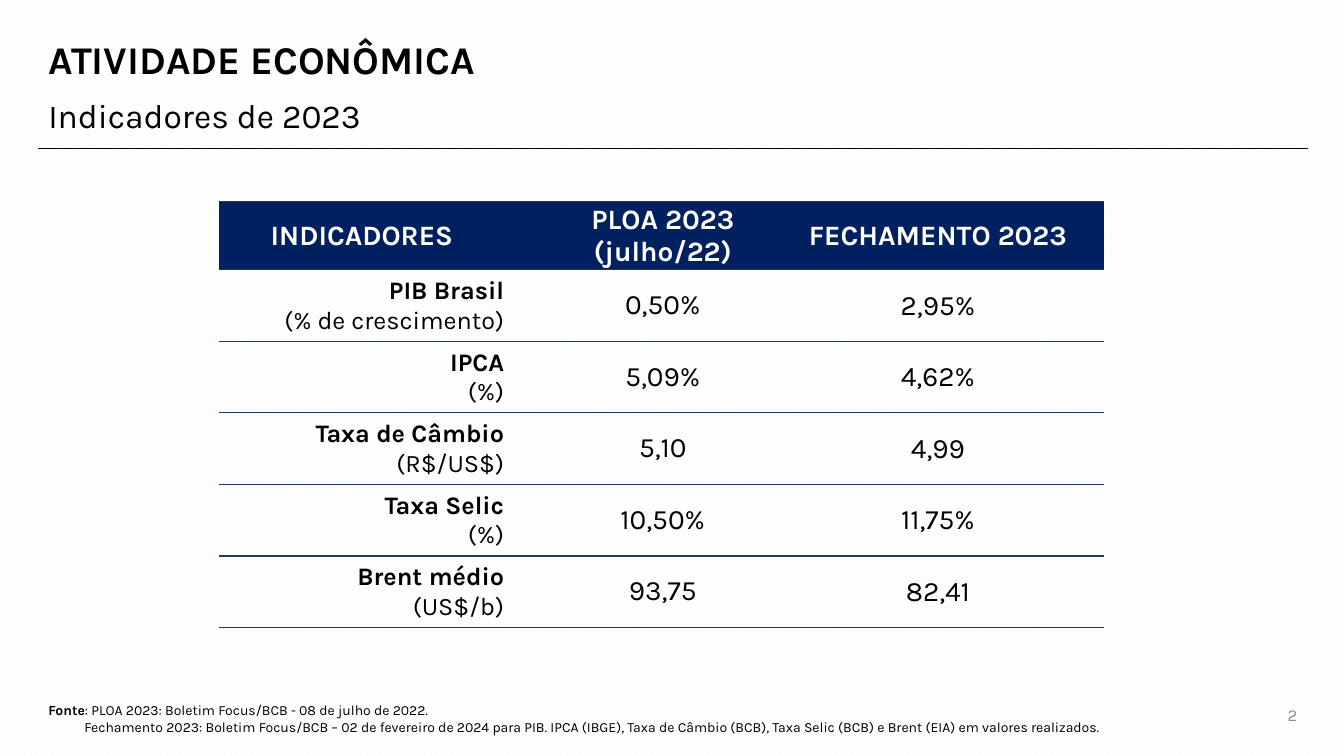
from dataclasses import dataclass
from typing import NamedTuple

from lxml import etree
from pptx import Presentation
from pptx.dml.color import RGBColor
from pptx.enum.dml import MSO_PATTERN
from pptx.enum.shapes import MSO_CONNECTOR
from pptx.enum.text import MSO_ANCHOR, MSO_AUTO_SIZE, PP_ALIGN
from pptx.oxml.ns import qn
from pptx.util import Pt

LEFT, CENTER, RIGHT = PP_ALIGN.LEFT, PP_ALIGN.CENTER, PP_ALIGN.RIGHT
MIDDLE, BOTTOM = MSO_ANCHOR.MIDDLE, MSO_ANCHOR.BOTTOM
NO_FIT = MSO_AUTO_SIZE.NONE
STRAIGHT = MSO_CONNECTOR.STRAIGHT
WIDE_DIAGONAL = MSO_PATTERN.WIDE_DOWNWARD_DIAGONAL
NO_STYLE_NO_GRID = "{2D5ABB26-0587-4C30-8999-92F81FD0307C}"


@dataclass(frozen=True)
class Theme:
    font: str = "Karla"
    ink: str = "000000"
    paper: str = "FFFFFF"
    hatch: str = "F2F2F2"
    navy: str = "002060"
    rule: str = "203864"
    muted: str = "8C8C8C"
    title: int = 28
    subtitle: int = 24
    value: int = 20
    label: int = 18
    number: int = 12
    source: int = 10


class Part(NamedTuple):
    text: str
    bold: bool = False


class Box(NamedTuple):
    left: float
    top: float
    width: float
    height: float


class Indicator(NamedTuple):
    name: str
    unit: str
    forecast: str
    closing: str


THEME = Theme()
COLUMN_WIDTHS = (204.5, 12.2, 190.8, 202.3, 6.5)
LABEL_COL, FORECAST_COL, CLOSING_COL = 0, 2, 3
HEADER_HEIGHT, ROW_HEIGHT = 48, 51.1
TIGHT = (0.72, 0.72, 0.72, 0)
ROOMY = (10.8, 5.76, 10.8, 5.76)
HEADINGS = {
    LABEL_COL: ("INDICADORES",),
    FORECAST_COL: ("PLOA 2023", "(julho/22)"),
    CLOSING_COL: ("FECHAMENTO 2023",),
}
INDICATORS = (
    Indicator("PIB Brasil", "(% de crescimento)", "0,50%", "2,95%"),
    Indicator("IPCA", "(%)", "5,09%", "4,62%"),
    Indicator("Taxa de Câmbio", "(R$/US$)", "5,10", "4,99"),
    Indicator("Taxa Selic", "(%)", "10,50%", "11,75%"),
    Indicator("Brent médio", "(US$/b)", "93,75", "82,41"),
)


def rgb(value: str) -> RGBColor:
    return RGBColor.from_string(value)


def write(frame, lines, *, size, color=THEME.ink, align=LEFT, spacing=None) -> None:
    """Fill a text frame with lines, each a sequence of parts."""
    for index, parts in enumerate(lines):
        paragraph = frame.paragraphs[0] if index == 0 else frame.add_paragraph()
        paragraph.alignment = align
        if spacing:
            paragraph.line_spacing = spacing
        for part in parts:
            run = paragraph.add_run()
            run.text = part.text
            run.font.name = THEME.font
            run.font.size = Pt(size)
            run.font.bold = part.bold
            run.font.color.rgb = rgb(color)


def add_text(slide, box: Box, lines, *, anchor=MIDDLE, **text_format):
    frame = slide.shapes.add_textbox(*map(Pt, box)).text_frame
    frame.word_wrap = True
    frame.vertical_anchor = anchor
    write(frame, lines, **text_format)
    return frame


def write_cell(cell, lines, *, insets=TIGHT, **text_format) -> None:
    cell.vertical_anchor = MIDDLE
    (cell.margin_left, cell.margin_top,
     cell.margin_right, cell.margin_bottom) = map(Pt, insets)
    write(cell.text_frame, lines, **text_format)


def rule_cell(cell) -> None:
    """Draw the thin rule above and below a cell."""
    properties = cell._tc.get_or_add_tcPr()
    for side in ("a:lnT", "a:lnB"):
        line = etree.SubElement(properties, qn(side), w=str(Pt(1)))
        fill = etree.SubElement(line, qn("a:solidFill"))
        etree.SubElement(fill, qn("a:srgbClr"), val=THEME.rule)


def add_heading(slide) -> None:
    title = slide.shapes.title
    title.left, title.top, title.width, title.height = map(
        Pt, Box(27.4, 15.8, 565.2, 56.9))
    title.text_frame.auto_size = NO_FIT
    title.text_frame.vertical_anchor = MIDDLE
    write(title.text_frame, [[Part("ATIVIDADE ECONÔMICA", True)]],
          size=THEME.title, spacing=0.9)
    add_text(slide, Box(27.4, 58.3, 862.6, 42.5), [[Part("Indicadores de 2023")]],
             size=THEME.subtitle, spacing=1.2)
    divider = slide.shapes.add_connector(
        STRAIGHT, Pt(27.4), Pt(105.8), Pt(934.6), Pt(105.8))
    divider.line.color.rgb = rgb(THEME.ink)
    divider.line.width = Pt(0.5)
    etree.SubElement(divider._element.spPr, qn("a:effectLst"))


def add_indicators(slide) -> None:
    box = Box(156.3, 144, sum(COLUMN_WIDTHS),
              HEADER_HEIGHT + ROW_HEIGHT * len(INDICATORS))
    table = slide.shapes.add_table(
        len(INDICATORS) + 1, len(COLUMN_WIDTHS), *map(Pt, box)).table
    table._tbl.tblPr.find(qn("a:tableStyleId")).text = NO_STYLE_NO_GRID
    table.horz_banding = False
    for column, width in zip(table.columns, COLUMN_WIDTHS):
        column.width = Pt(width)
    for index, row in enumerate(table.rows):
        row.height = Pt(ROW_HEIGHT if index else HEADER_HEIGHT)
        for cell in row.cells:
            rule_cell(cell)
            if index:
                cell.fill.background()
            else:
                cell.fill.solid()
                cell.fill.fore_color.rgb = rgb(THEME.navy)

    # Header row
    for column, heading in HEADINGS.items():
        write_cell(table.cell(0, column), [[Part(text, True)] for text in heading],
                   size=THEME.value, color=THEME.paper, align=CENTER)

    # Indicator rows
    for index, item in enumerate(INDICATORS, start=1):
        write_cell(table.cell(index, LABEL_COL),
                   [[Part(item.name, True)], [Part(item.unit)]],
                   size=THEME.label, align=RIGHT)
        write_cell(table.cell(index, FORECAST_COL), [[Part(item.forecast)]],
                   insets=ROOMY, size=THEME.value, align=CENTER)
        write_cell(table.cell(index, CLOSING_COL), [[Part(item.closing)]],
                   size=THEME.value, align=CENTER)


def add_footer(slide) -> None:
    source = add_text(slide, Box(27.4, 496.8, 775.4, 32.2), [
        [Part("Fonte", True),
         Part(": PLOA 2023: Boletim Focus/BCB - 08 de julho de 2022.")],
        [Part("Fechamento 2023: Boletim Focus/BCB – 02 de fevereiro de 2024 para PIB. "
              "IPCA (IBGE), Taxa de Câmbio (BCB), Taxa Selic (BCB) e Brent (EIA) "
              "em valores realizados.")],
    ], anchor=BOTTOM, size=THEME.source)
    source.paragraphs[1]._p.get_or_add_pPr().set("marL", str(Pt(25.7)))
    add_text(slide, Box(864.7, 496.1, 69.1, 28.8), [[Part("2")]],
             size=THEME.number, color=THEME.muted, align=RIGHT)


def main() -> None:
    deck = Presentation()
    deck.slide_width, deck.slide_height = Pt(960), Pt(540)
    slide = deck.slides.add_slide(deck.slide_layouts[5])

    # Hatched background
    background = slide.background.fill
    background.patterned()
    background.pattern = WIDE_DIAGONAL
    background.fore_color.rgb = rgb(THEME.hatch)
    background.back_color.rgb = rgb(THEME.paper)

    add_heading(slide)
    add_indicators(slide)
    add_footer(slide)
    deck.save("out.pptx")


if __name__ == "__main__":
    main()
